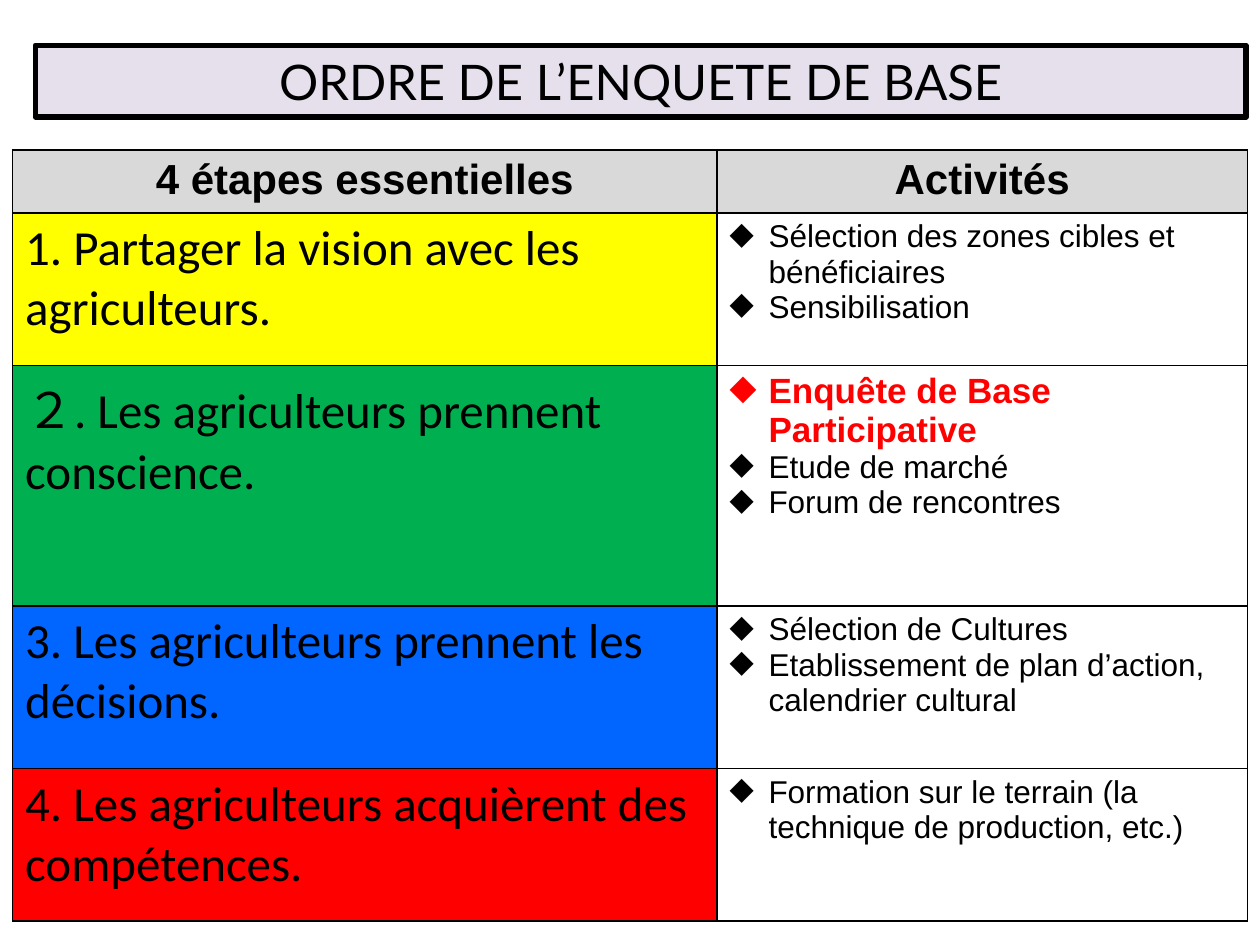
import lxml.etree
import pptx
import pptx.dml.color
import pptx.enum.shapes
import pptx.enum.text
import pptx.oxml.ns
import pptx.util

Inches = pptx.util.Inches
Pt = pptx.util.Pt
qn = pptx.oxml.ns.qn
align = pptx.enum.text.PP_ALIGN

theme = {
    "ink": "000000", "alert": "FF0000", "head": "D9D9D9", "title": "E6E0EC",
    "steps": ["FFFF00", "00B050", "0066FF", "FF0000"],
    "text": {
        "title": {"name": "Lato", "size": Pt(28), "bold": False},
        "head": {"name": "Arial", "size": Pt(24), "bold": True},
        "step": {"name": "Calibri", "size": Pt(28), "bold": False},
        "item": {"name": "Arial", "size": Pt(18), "bold": False},
        "key": {"name": "Arial", "size": Pt(20), "bold": True},
    },
}
heads = ["4 étapes essentielles", "Activités"]
steps = [
    ("1. Partager la vision avec les agriculteurs.",
     ["Sélection des zones cibles et bénéficiaires", "Sensibilisation"]),
    ("２. Les agriculteurs prennent conscience.",
     ["Enquête de Base Participative", "Etude de marché", "Forum de rencontres"]),
    ("3. Les agriculteurs prennent les décisions.",
     ["Sélection de Cultures", "Etablissement de plan d’action, calendrier cultural"]),
    ("4. Les agriculteurs acquièrent des compétences.",
     ["Formation sur le terrain (la technique de production, etc.)"]),
]
key = "Enquête de Base Participative"


def color(name):
    return pptx.dml.color.RGBColor.from_string(name)


def write(para, words, style, ink=theme["ink"]):
    run = para.add_run()
    run.text = words
    for name, value in theme["text"][style].items():
        setattr(run.font, name, value)
    run.font.color.rgb = color(ink)


deck = pptx.Presentation()
deck.slide_width = Inches(10)
deck.slide_height = Inches(7.5)
slide = deck.slides.add_slide(deck.slide_layouts[6])

frame = slide.shapes.add_table(
    5, 2, Inches(0.1), Inches(1.19), Inches(9.8), Inches(6.12))
table = frame.table
table.first_row = False
table.horz_banding = False
for col, width in zip(table.columns, [5.59, 4.21]):
    col.width = Inches(width)
for row, height in zip(table.rows, [0.5, 1.21, 1.91, 1.29, 1.21]):
    row.height = Inches(height)

for cell in table.iter_cells():
    props = cell._tc.get_or_add_tcPr()
    for side in ["lnL", "lnR", "lnT", "lnB"]:
        line = lxml.etree.SubElement(props, qn("a:" + side), w=str(Pt(1)))
        fill = lxml.etree.SubElement(line, qn("a:solidFill"))
        lxml.etree.SubElement(fill, qn("a:srgbClr"), val=theme["ink"])
    cell.fill.background()

for num, words in enumerate(heads):
    cell = table.cell(0, num)
    cell.fill.solid()
    cell.fill.fore_color.rgb = color(theme["head"])
    para = cell.text_frame.paragraphs[0]
    para.alignment = align.CENTER
    write(para, words, "head")

for num, (step, items) in enumerate(steps):
    cell = table.cell(num + 1, 0)
    cell.fill.solid()
    cell.fill.fore_color.rgb = color(theme["steps"][num])
    write(cell.text_frame.paragraphs[0], step, "step")

    body = table.cell(num + 1, 1).text_frame
    for spot, item in enumerate(items):
        para = body.add_paragraph() if spot else body.paragraphs[0]
        props = para._p.get_or_add_pPr()
        props.set("marL", str(Inches(0.31)))
        props.set("indent", str(-Inches(0.31)))
        lxml.etree.SubElement(props, qn("a:buChar"), char="◆")
        if item == key:
            write(para, item, "key", theme["alert"])
        else:
            write(para, item, "item")

title = slide.shapes.add_shape(
    pptx.enum.shapes.MSO_SHAPE.RECTANGLE,
    Inches(0.28), Inches(0.36), Inches(9.61), Inches(0.57))
title.shadow.inherit = False
title.fill.solid()
title.fill.fore_color.rgb = color(theme["title"])
title.line.color.rgb = color(theme["ink"])
title.line.width = Pt(3)
text = title.text_frame
text.word_wrap = True
text.auto_size = pptx.enum.text.MSO_AUTO_SIZE.SHAPE_TO_FIT_TEXT
text.paragraphs[0].alignment = align.CENTER
write(text.paragraphs[0], "ORDRE DE L’ENQUETE DE BASE", "title")

deck.save("out.pptx")
